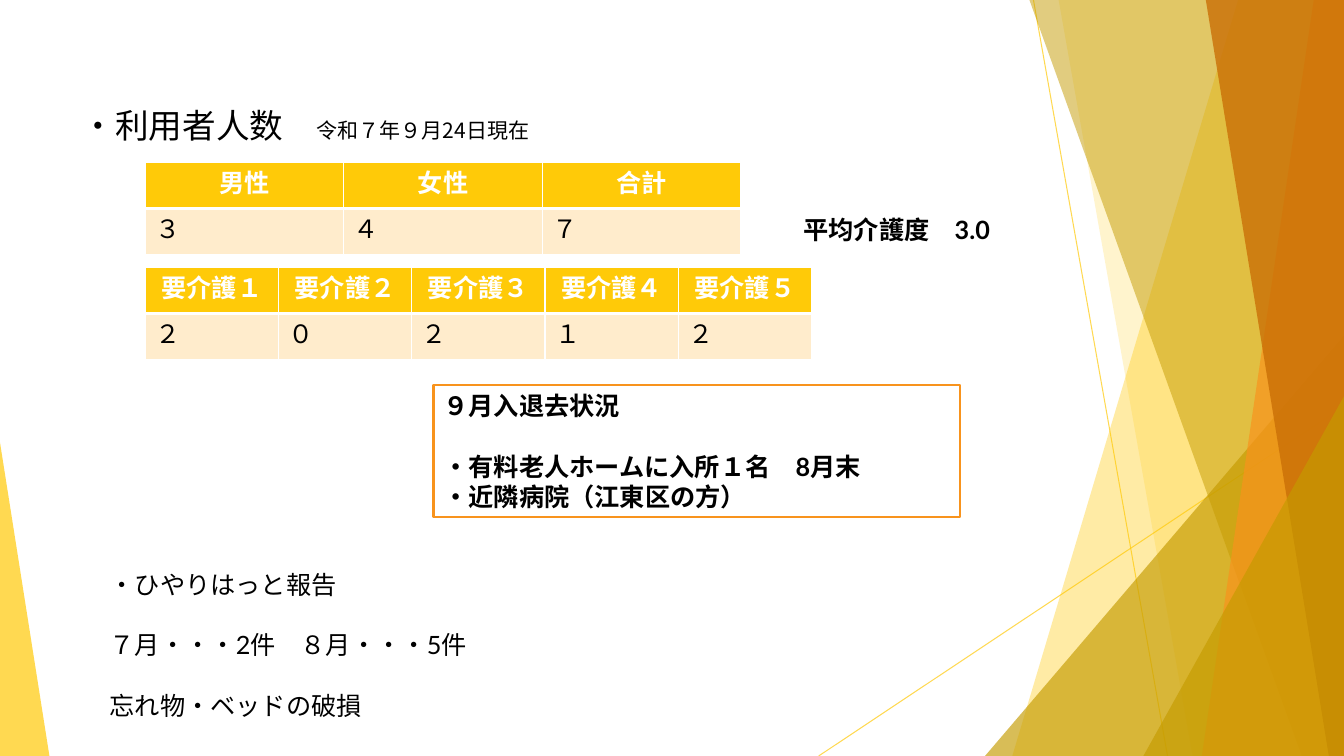
from lxml import etree
from pptx import Presentation
from pptx import util as u
from pptx.dml.color import RGBColor
from pptx.enum import shapes, text
from pptx.oxml.ns import qn

W, H = 13.33, 7.5
GOLD, OLIVE, ORANGE, BROWN = "FFCA08", "C59B00", "F8931D", "CA6F06"
PALE, WHITE, BLACK = "FFECCC", "FFFFFF", "000000"
LATIN, JAPANESE = "Lato", "Noto Sans CJK JP"


def rgb(value):
    return RGBColor.from_string(value)


def inches(*values):
    return [u.Inches(v) for v in values]


def set_alpha(parent, percent):
    """Make the solid colour found under parent partly transparent."""
    color = next(parent.iter(qn("a:srgbClr")))
    etree.SubElement(color, qn("a:alpha")).set("val", str(percent * 1000))


def paint(sp, color, alpha):
    sp.shadow.inherit = False
    sp.fill.solid()
    sp.fill.fore_color.rgb = rgb(color)
    set_alpha(sp._element.spPr, alpha)
    sp.line.fill.background()


def add_run(p, words, **fmt):
    """Add a run whose font also covers East Asian text."""
    r = p.add_run()
    r.text = words
    values = {"name": LATIN, "size": u.Pt(18), "bold": False} | fmt
    color = values.pop("color", BLACK)
    for key, value in values.items():
        setattr(r.font, key, value)
    r.font.color.rgb = rgb(color)
    latin = r._r.rPr.find(qn("a:latin"))
    latin.addnext(etree.Element(qn("a:ea"), typeface=values["name"]))


def add_line(s, start, end):
    line = s.shapes.add_connector(shapes.MSO_CONNECTOR.STRAIGHT, *inches(*start, *end))
    line.line.color.rgb = rgb(GOLD)
    line.line.width = u.Pt(0.75)
    set_alpha(line._element.spPr, 70)
    etree.SubElement(line._element.spPr, qn("a:effectLst"))


def add_band(s, top_x, bottom_x, color, alpha):
    """Full-height band from a slanted left edge to the right slide edge."""
    builder = s.shapes.build_freeform(*inches(top_x, 0))
    corners = [(W, 0), (W, H), (bottom_x, H)]
    builder.add_line_segments([inches(*c) for c in corners], close=True)
    paint(builder.convert_to_shape(), color, alpha)


def add_corner(s, left, width, height, apex, color, alpha):
    """Right triangle standing on the bottom edge of the slide."""
    sp = s.shapes.add_shape(shapes.MSO_SHAPE.ISOSCELES_TRIANGLE,
                            *inches(left, H - height, width, height))
    sp.adjustments[0] = apex
    paint(sp, color, alpha)


def add_backdrop(s):
    add_line(s, (10.25, 0), (11.58, H))
    add_line(s, (W, 4.03), (8.12, H))
    add_band(s, 12.28, 10.04, GOLD, 36)
    add_band(s, 10.5, 11.83, GOLD, 20)
    add_corner(s, 9.77, 3.56, 4.17, 1, OLIVE, 66)
    add_band(s, 10.21, 12.91, OLIVE, 50)
    add_band(s, 13.03, 11.92, ORANGE, 70)
    add_band(s, 11.96, 13.18, BROWN, 80)
    add_corner(s, 11.34, 1.99, 3.57, 1, OLIVE, 66)
    add_corner(s, 0, 0.49, 3.11, 0, GOLD, 70)


def set_borders(cell, bottom):
    tc_pr = cell._tc.get_or_add_tcPr()
    widths = {"a:lnL": 1, "a:lnR": 1, "a:lnT": 1, "a:lnB": bottom}
    for i, (tag, width) in enumerate(widths.items()):
        ln = etree.Element(qn(tag), w=str(u.Pt(width)))
        fill = etree.SubElement(ln, qn("a:solidFill"))
        etree.SubElement(fill, qn("a:srgbClr")).set("val", WHITE)
        tc_pr.insert(i, ln)


def add_count_table(s, box, counts):
    """Table with a gold heading row over one row of counts."""
    table = s.shapes.add_table(2, len(counts), *inches(*box)).table
    styles = [
        (GOLD, {"color": WHITE, "bold": True}, text.PP_ALIGN.CENTER, 3),
        (PALE, {}, text.PP_ALIGN.LEFT, 1),
    ]
    for col, pair in enumerate(counts.items()):
        for row, (fill, fmt, align, bottom) in enumerate(styles):
            cell = table.cell(row, col)
            cell.fill.solid()
            cell.fill.fore_color.rgb = rgb(fill)
            p = cell.text_frame.paragraphs[0]
            p.alignment = align
            add_run(p, pair[row], **fmt)
            set_borders(cell, bottom)


def fill_lines(tf, lines, **fmt):
    """Write (words, points of space before) pairs as left-aligned paragraphs."""
    tf.word_wrap = True
    for i, (words, gap) in enumerate(lines):
        p = tf.add_paragraph() if i else tf.paragraphs[0]
        p.alignment = text.PP_ALIGN.LEFT
        if gap:
            p.space_before = u.Pt(gap)
        add_run(p, words, **fmt)


def add_text(s, box, lines, **fmt):
    fill_lines(s.shapes.add_textbox(*inches(*box)).text_frame, lines, **fmt)


def add_title(s, box):
    tf = s.shapes.add_textbox(*inches(*box)).text_frame
    tf.word_wrap = True
    tf.vertical_anchor = text.MSO_ANCHOR.BOTTOM
    p = tf.paragraphs[0]
    p.alignment = text.PP_ALIGN.CENTER
    for words, size in [("・利用者人数　", 24), ("令和７年９月24日現在", 15)]:
        add_run(p, words, name=JAPANESE, size=u.Pt(size))


def add_status_box(s, box, lines):
    sp = s.shapes.add_shape(shapes.MSO_SHAPE.RECTANGLE, *inches(*box))
    sp.shadow.inherit = False
    sp.fill.solid()
    sp.fill.fore_color.rgb = rgb(WHITE)
    sp.line.color.rgb = rgb(ORANGE)
    sp.line.width = u.Pt(1.5)
    fill_lines(sp.text_frame, lines, bold=True)


def main():
    prs = Presentation()
    prs.slide_width, prs.slide_height = inches(W, H)
    s = prs.slides.add_slide(prs.slide_layouts[6])
    add_backdrop(s)
    add_title(s, (0.48, 0.92, 5.1, 0.57))
    add_count_table(s, (1.44, 1.61, 5.91, 0.92), {"男性": "３", "女性": "４", "合計": "７"})
    levels = {f"要介護{level}": count for level, count in zip("１２３４５", "２０２１２")}
    add_count_table(s, (1.44, 2.65, 6.61, 0.92), levels)
    add_text(s, (7.87, 2.08, 2.75, 0.4), [("平均介護度　3.0", 0)], bold=True)
    add_status_box(s, (4.3, 3.82, 5.22, 1.31), [
        ("９月入退去状況", 0),
        ("・有料老人ホームに入所１名　8月末", 21.5),
        ("・近隣病院（江東区の方）", 0),
    ])
    add_text(s, (0.99, 5.6, 4.08, 1.62), [
        ("・ひやりはっと報告", 0),
        ("７月・・・2件　８月・・・5件", 21.5),
        ("忘れ物・ベッドの破損", 21.5),
    ])
    prs.save("out.pptx")


if __name__ == "__main__":
    main()
